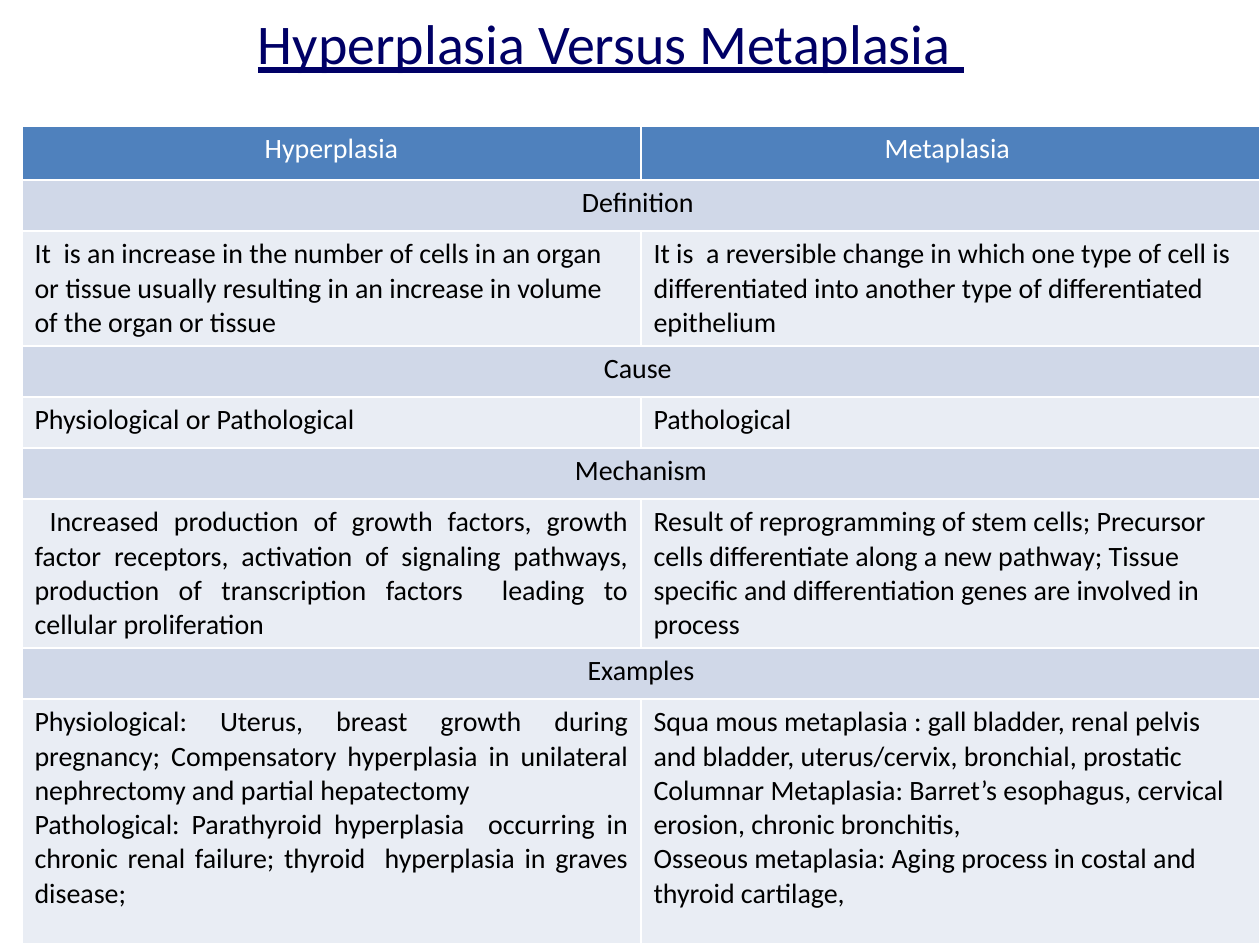
from dataclasses import dataclass

from pptx import Presentation
from pptx.dml.color import RGBColor
from pptx.enum.text import MSO_ANCHOR, PP_ALIGN
from pptx.util import Emu, Pt

CENTER, LEFT, JUSTIFY = PP_ALIGN.CENTER, PP_ALIGN.LEFT, PP_ALIGN.JUSTIFY
MIDDLE = MSO_ANCHOR.MIDDLE

PX_PER_INCH = 126
FONT = "Calibri"
COLORS = {
    "title": "000066",
    "header": "4F81BD",
    "header_text": "FFFFFF",
    "section": "D0D8E8",
    "detail": "E9EDF4",
    "text": "000000",
}

TABLE_LEFT, TABLE_TOP, COLUMN_WIDTH = 22, 126, 619


@dataclass(frozen=True)
class Cell:
    paragraphs: tuple[str, ...]
    align: PP_ALIGN = LEFT


@dataclass(frozen=True)
class Row:
    """A comparison row; a single cell spans both columns."""
    height: int
    cells: tuple[Cell, ...]
    fill: str = "detail"
    color: str = "text"


def section(name: str) -> Row:
    return Row(51, (Cell((name,), CENTER),), "section")


ROWS = (
    Row(54, (Cell(("Hyperplasia",), CENTER), Cell(("Metaplasia ",), CENTER)),
        "header", "header_text"),
    section("Definition "),
    Row(115, (
        Cell(("It  is an increase in the number of cells in an organ or tissue "
              "usually resulting in an increase in volume of the organ or tissue",)),
        Cell(("It is  a reversible change in which one type of cell is "
              "differentiated into another type of differentiated epithelium",)),
    )),
    section("Cause "),
    Row(51, (Cell(("Physiological or Pathological",)), Cell(("Pathological",)))),
    section("Mechanism"),
    Row(149, (
        Cell((" Increased production of growth factors, growth factor receptors, "
              "activation of signaling pathways, production of transcription "
              "factors  leading to cellular proliferation",), JUSTIFY),
        Cell(("Result of reprogramming of stem cells; Precursor cells differentiate "
              "along a new pathway; Tissue specific and differentiation genes are "
              "involved in process",)),
    )),
    section("Examples"),
    Row(245, (
        Cell(("Physiological: Uterus, breast growth during pregnancy; Compensatory "
              "hyperplasia in unilateral nephrectomy and partial hepatectomy",
              "Pathological: Parathyroid hyperplasia  occurring in chronic renal "
              "failure; thyroid  hyperplasia in graves disease; "), JUSTIFY),
        Cell(("Squa mous metaplasia : gall bladder, renal pelvis and bladder, "
              "uterus/cervix, bronchial, prostatic",
              "Columnar Metaplasia: Barret’s esophagus, cervical erosion, "
              "chronic bronchitis,",
              "Osseous metaplasia: Aging process in costal and thyroid cartilage,")),
    )),
)


def px(length: int) -> Emu:
    return Emu(round(length * 914400 / PX_PER_INCH))


def rgb(name: str) -> RGBColor:
    return RGBColor.from_string(COLORS[name])


def write_text(frame, paragraphs: tuple[str, ...], *, size: int, color: str,
               align: PP_ALIGN, underline: bool = False) -> None:
    frame.word_wrap = True
    for index, text in enumerate(paragraphs):
        para = frame.paragraphs[0] if index == 0 else frame.add_paragraph()
        para.alignment = align
        span = para.add_run()
        span.text = text
        span.font.name = FONT
        span.font.size = Pt(size)
        span.font.bold = False
        span.font.underline = underline
        span.font.color.rgb = rgb(color)


def draw_title(page) -> None:
    box = page.shapes.add_textbox(px(44), px(0), px(1134), px(84))
    box.text_frame.vertical_anchor = MIDDLE
    write_text(box.text_frame, ("Hyperplasia Versus Metaplasia ",),
               size=32, color="title", align=CENTER, underline=True)


def draw_comparison(page, rows: tuple[Row, ...]) -> None:
    height = sum(row.height for row in rows)
    table = page.shapes.add_table(len(rows), 2, px(TABLE_LEFT), px(TABLE_TOP),
                                  px(2 * COLUMN_WIDTH), px(height)).table
    table.horz_banding = False
    for column in table.columns:
        column.width = px(COLUMN_WIDTH)
    for index, row in enumerate(rows):
        table.rows[index].height = px(row.height)
        for cell in table.rows[index].cells:
            cell.fill.solid()
            cell.fill.fore_color.rgb = rgb(row.fill)
        if len(row.cells) == 1:
            table.cell(index, 0).merge(table.cell(index, 1))
        for column, content in enumerate(row.cells):
            write_text(table.cell(index, column).text_frame, content.paragraphs,
                       size=16, color=row.color, align=content.align)


def main() -> None:
    deck = Presentation()
    deck.slide_width, deck.slide_height = px(1260), px(945)
    page = deck.slides.add_slide(deck.slide_layouts[6])
    draw_title(page)
    draw_comparison(page, ROWS)
    deck.save("out.pptx")


if __name__ == "__main__":
    main()
